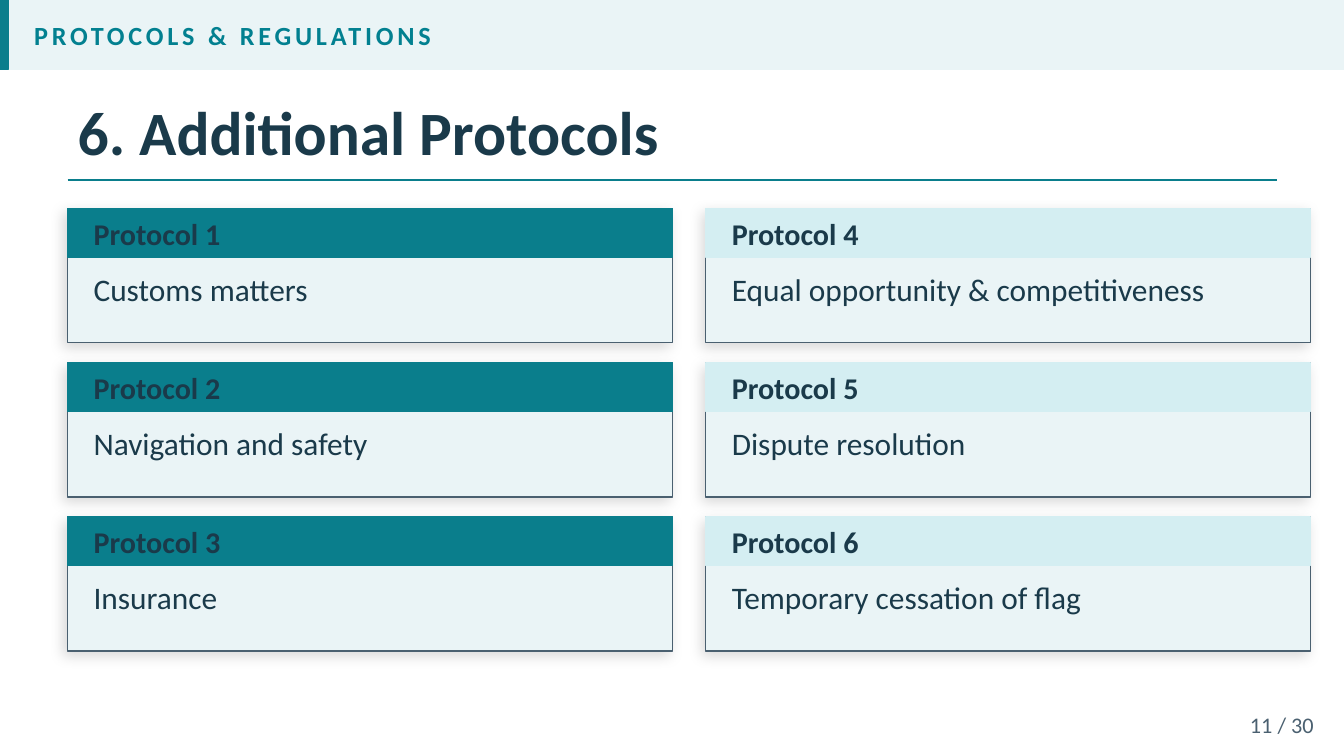
from dataclasses import dataclass

from lxml import etree
from pptx import Presentation
from pptx.dml.color import RGBColor
from pptx.enum.shapes import MSO_CONNECTOR, MSO_SHAPE
from pptx.enum.text import MSO_ANCHOR, PP_ALIGN
from pptx.oxml import parse_xml
from pptx.oxml.ns import qn
from pptx.util import Inches, Pt

RECTANGLE = MSO_SHAPE.RECTANGLE
STRAIGHT = MSO_CONNECTOR.STRAIGHT
TOP, MIDDLE = MSO_ANCHOR.TOP, MSO_ANCHOR.MIDDLE
LEFT, RIGHT = PP_ALIGN.LEFT, PP_ALIGN.RIGHT


@dataclass(frozen=True)
class Theme:
    font: str = "Calibri"
    pale: RGBColor = RGBColor.from_string("EAF4F6")
    teal: RGBColor = RGBColor.from_string("0A7E8C")
    light_teal: RGBColor = RGBColor.from_string("D4EEF2")
    section: RGBColor = RGBColor.from_string("028090")
    ink: RGBColor = RGBColor.from_string("1A3A4A")
    slate: RGBColor = RGBColor.from_string("4A6070")
    title_size: float = 44
    section_size: float = 18.7
    heading_size: float = 21.5
    body_size: float = 22.4
    page_size: float = 15.9


theme = Theme()
SHADOW = (
    '<a:outerShdw xmlns:a="http://schemas.openxmlformats.org/drawingml/2006/main" '
    'blurRad="127000" dist="50800" dir="8100000" algn="bl" rotWithShape="0">'
    '<a:srgbClr val="000000"><a:alpha val="15000"/></a:srgbClr></a:outerShdw>'
)

presentation = Presentation()
presentation.slide_width = Inches(13.33)
presentation.slide_height = Inches(7.5)
slide = presentation.slides.add_slide(presentation.slide_layouts[5])


def add_rectangle(left, top, width, height, fill, line):
    shape = slide.shapes.add_shape(
        RECTANGLE, Inches(left), Inches(top), Inches(width), Inches(height)
    )
    shape.shadow.inherit = False
    shape.fill.solid()
    shape.fill.fore_color.rgb = fill
    shape.line.color.rgb = line
    shape.line.width = Pt(1)
    return shape


def write_text(shape, box, text, size, color, bold=False, align=LEFT, anchor=MIDDLE):
    shape.left, shape.top, shape.width, shape.height = [Inches(value) for value in box]
    frame = shape.text_frame
    frame.word_wrap = True
    frame.vertical_anchor = anchor
    paragraph = frame.paragraphs[0]
    paragraph.alignment = align
    run = paragraph.add_run()
    run.text = text
    run.font.name = theme.font
    run.font.size = Pt(size)
    run.font.bold = bold
    run.font.color.rgb = color
    return run


add_rectangle(0, 0, 13.33, 0.69, theme.pale, theme.pale)
add_rectangle(0, 0, 0.08, 0.69, theme.teal, theme.teal)
section_run = write_text(
    slide.shapes.add_textbox(0, 0, 0, 0), (0.24, 0, 12.8, 0.69),
    "PROTOCOLS & REGULATIONS", theme.section_size, theme.section, bold=True,
)
section_run.font._element.set("spc", "270")

write_text(
    slide.shapes.title, (0.67, 0.83, 12, 0.93),
    "6. Additional Protocols", theme.title_size, theme.ink, bold=True,
)
title_rule = slide.shapes.add_connector(
    STRAIGHT, Inches(0.67), Inches(1.79), Inches(12.67), Inches(1.79)
)
title_rule.line.color.rgb = theme.teal
title_rule.line.width = Pt(1.5)
etree.SubElement(title_rule._element.spPr, qn("a:effectLst"))

write_text(
    slide.shapes.add_textbox(0, 0, 0, 0), (12, 7, 1.13, 0.37),
    "11 / 30", theme.page_size, theme.slate, align=RIGHT,
)

columns = [
    (0.67, theme.teal, ["Customs matters", "Navigation and safety", "Insurance"]),
    (7, theme.light_teal, [
        "Equal opportunity & competitiveness",
        "Dispute resolution",
        "Temporary cessation of flag",
    ]),
]
number = 0
for left, heading_fill, subjects in columns:
    for row, subject in enumerate(subjects):
        number += 1
        top = 2.07 + row * 1.53
        card = add_rectangle(left, top, 6, 1.33, theme.pale, theme.slate)
        card._element.spPr.find(qn("a:effectLst")).append(parse_xml(SHADOW))
        add_rectangle(left, top, 6, 0.48, heading_fill, heading_fill)
        write_text(
            slide.shapes.add_textbox(0, 0, 0, 0), (left + 0.16, top + 0.03, 5.73, 0.43),
            f"Protocol {number}", theme.heading_size, theme.ink, bold=True,
        )
        write_text(
            slide.shapes.add_textbox(0, 0, 0, 0), (left + 0.16, top + 0.56, 5.73, 0.67),
            subject, theme.body_size, theme.ink, anchor=TOP,
        )

presentation.save("out.pptx")
